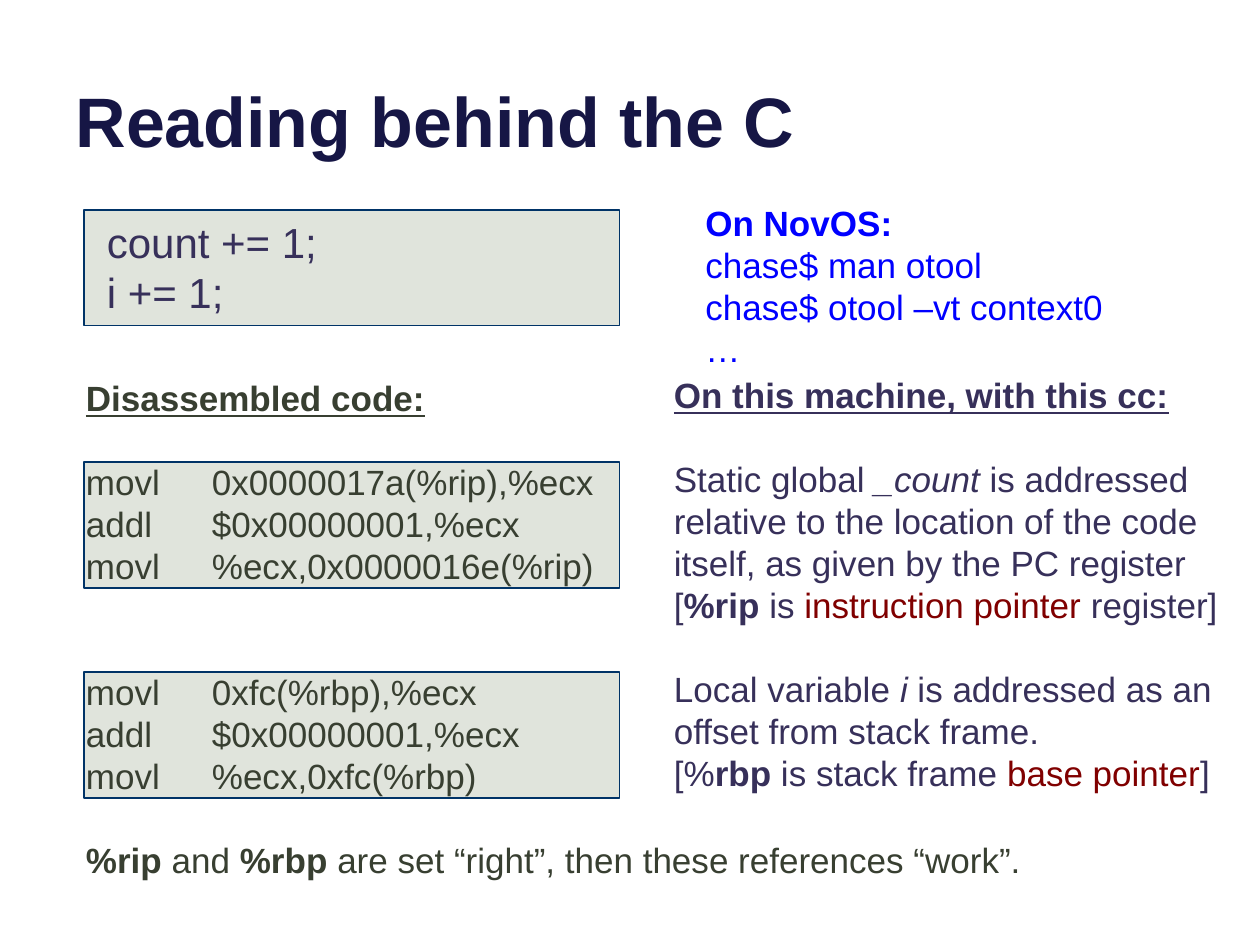
from pptx import Presentation
from pptx import util as u
from pptx.dml.color import RGBColor
from pptx.enum import shapes, text

COLORS = {
    "title": "161645",
    "code": "383F31",
    "note": "37305A",
    "shell": "0000FF",
    "accent": "800000",
    "panel": "E0E4DC",
    "border": "003367",
}
COLUMNS, ROWS = 120, 90
BOLD = {"bold": True}
ITALIC = {"italic": True}
ACCENT = {"color": "accent"}
HEADING = {"bold": True, "underline": True}


def color(name):
    return RGBColor.from_string(COLORS[name])


def add_span(para, words, size=20, color_name="code", bold=False,
             italic=False, underline=False, **extra):
    span = para.add_run()
    span.text = words
    font = span.font
    font.name = "Arial"
    font.size = u.Pt(size)
    font.bold, font.italic, font.underline = bold, italic, underline
    font.color.rgb = color(extra.get("color", color_name))


class SlideBuilder:
    def __init__(self):
        self.deck = Presentation()
        self.deck.slide_width = u.Inches(10)
        self.deck.slide_height = u.Inches(7.5)
        self.page = self.deck.slides.add_slide(self.deck.slide_layouts[5])

    def area(self, column, row, width, height):
        across = self.deck.slide_width / COLUMNS
        down = self.deck.slide_height / ROWS
        return [int(n) for n in (column * across, row * down,
                                 width * across, height * down)]

    def title(self, words, *grid):
        box = self.page.shapes.title
        box.left, box.top, box.width, box.height = self.area(*grid)
        frame = box.text_frame
        frame.auto_size = text.MSO_AUTO_SIZE.NONE
        frame.vertical_anchor = text.MSO_ANCHOR.BOTTOM
        para = frame.paragraphs[0]
        para.alignment = text.PP_ALIGN.LEFT
        add_span(para, words, size=40, color_name="title", bold=True)

    def panel(self, *grid):
        box = self.page.shapes.add_shape(shapes.MSO_SHAPE.RECTANGLE, *self.area(*grid))
        box.shadow.inherit = False
        box.fill.solid()
        box.fill.fore_color.rgb = color("panel")
        box.line.color.rgb = color("border")
        box.line.width = u.Pt(0.75)

    def text(self, grid, lines, size=20, color_name="code"):
        frame = self.page.shapes.add_textbox(*self.area(*grid)).text_frame
        frame.word_wrap = True
        pitch = 1.2 * size
        for number, (gap, *spans) in enumerate(lines):
            para = frame.add_paragraph() if number else frame.paragraphs[0]
            para.line_spacing = u.Pt(pitch)
            para.space_before = u.Pt(gap * pitch)
            for span in spans:
                words, style = (span, {}) if isinstance(span, str) else span
                add_span(para, words, size=size, color_name=color_name, **style)


def main():
    slide = SlideBuilder()
    slide.title("Reading behind the C", 6, -4.4, 108, 20.4)
    for row, height in ((20, 11), (44, 12), (64, 12)):
        slide.panel(8, row, 51, height)

    slide.text((9, 20, 60, 11), [(0, "count += 1;"), (0, "i += 1;")],
               size=24, color_name="note")
    slide.text((7, 35.3, 109, 49.7), [
        (0, ("Disassembled code:", HEADING)),
        (1, "movl\t0x0000017a(%rip),%ecx"),
        (0, "addl\t$0x00000001,%ecx"),
        (0, "movl\t%ecx,0x0000016e(%rip)"),
        (2, "movl\t0xfc(%rbp),%ecx"),
        (0, "addl\t$0x00000001,%ecx"),
        (0, "movl\t%ecx,0xfc(%rbp)"),
        (1, ("%rip ", BOLD), "and ", ("%rbp ", BOLD),
         "are set “right”, then these references “work”."),
    ])
    slide.text((66, 18.6, 60, 17.4), [
        (0, ("On NovOS:", BOLD)),
        (0, "chase$ man otool"),
        (0, "chase$ otool –vt context0"),
        (0, "…"),
    ], color_name="shell")
    slide.text((63, 35, 55, 41.6), [
        (0, ("On this machine, with this cc:", HEADING)),
        (1, "Static global ", ("_count", ITALIC),
         " is addressed relative to the location of the code itself, "
         "as given by the PC register [",
         ("%rip ", BOLD), "is ", ("instruction pointer ", ACCENT), "register]"),
        (1, "Local variable ", ("i", ITALIC),
         " is addressed as an offset from stack frame."),
        (0, "[%", ("rbp", BOLD), " is stack frame ", ("base pointer", ACCENT), "]"),
    ], color_name="note")
    slide.deck.save("out.pptx")


if __name__ == "__main__":
    main()
